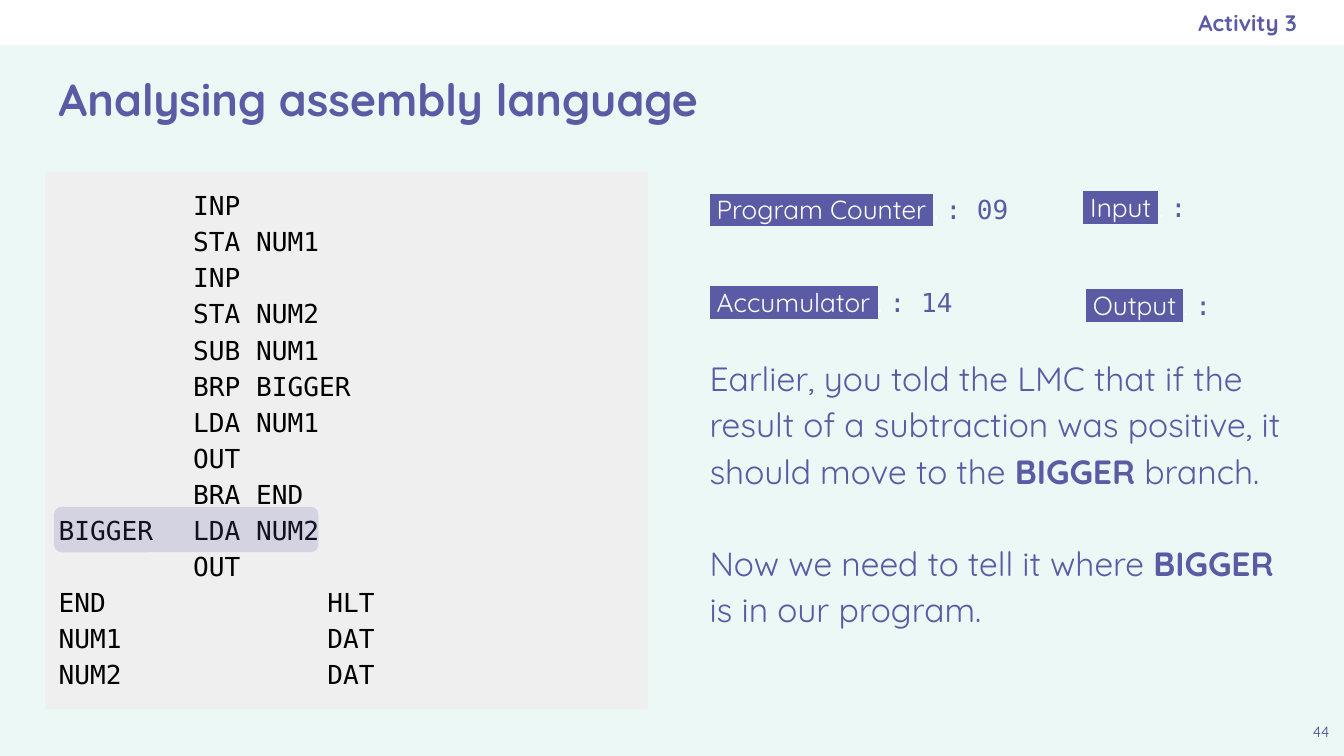
from lxml import etree
from pptx import Presentation
from pptx.dml.color import RGBColor
from pptx.enum.shapes import MSO_SHAPE
from pptx.enum.text import MSO_ANCHOR, MSO_AUTO_SIZE, PP_ALIGN
from pptx.oxml.ns import qn
from pptx.util import Cm, Pt

RECT, ROUNDED = MSO_SHAPE.RECTANGLE, MSO_SHAPE.ROUNDED_RECTANGLE
TOP, MIDDLE = MSO_ANCHOR.TOP, MSO_ANCHOR.MIDDLE
LEFT, CENTER, RIGHT = PP_ALIGN.LEFT, PP_ALIGN.CENTER, PP_ALIGN.RIGHT
NO_FIT = MSO_AUTO_SIZE.NONE

SANS, MONO = "Quicksand", "DejaVu Sans Mono"
PURPLE, DARK_PURPLE = "5B5BA5", "494985"
WHITE, BLACK, GREY, MINT = "FFFFFF", "000000", "EFEFEF", "ECF8F5"
INSET = 0.25
TAB = 2.54

PROGRAM = [
    "INP", "STA NUM1", "INP", "STA NUM2", "SUB NUM1", "BRP BIGGER",
    "LDA NUM1", "OUT", "BRA END", "BIGGER \tLDA NUM2", "OUT",
    "END \t\tHLT", "NUM1\t\tDAT", "NUM2\t\tDAT",
]
REGISTERS = [
    ("Program Counter", ": 09", 13.16, 3.33, 6.2),
    ("Accumulator", ": 14", 13.16, 5.08, 6.2),
    ("Input", ":", 20.22, 3.28, 4.27),
    ("Output", ":", 20.27, 5.13, 4.27),
]
EXPLANATION = [
    ("Earlier, you told the LMC that if the result of a subtraction was "
     "positive, it should move to the ", "BIGGER", " branch."),
    ("Now we need to tell it where ", "BIGGER", " is in our program."),
]


def color(value):
    return RGBColor.from_string(value)


def set_font(font, size, name, value, bold=False):
    font.size = Pt(size)
    font.name = name
    font.bold = bold
    font.color.rgb = color(value)


def set_frame(tf, anchor=TOP, right=INSET):
    tf.word_wrap = True
    tf.auto_size = NO_FIT
    tf.vertical_anchor = anchor
    tf.margin_left = tf.margin_top = tf.margin_bottom = Cm(INSET)
    tf.margin_right = Cm(right)


def add_box(slide, box, shape, fill):
    sp = slide.shapes.add_shape(shape, *map(Cm, box))
    sp.shadow.inherit = False
    sp.fill.solid()
    sp.fill.fore_color.rgb = color(fill)
    sp.line.fill.background()
    return sp


def add_text_frame(slide, box, anchor=TOP, right=INSET):
    tf = slide.shapes.add_textbox(*map(Cm, box)).text_frame
    set_frame(tf, anchor, right)
    return tf


def add_label(slide, box, text, size, value, align, bold=False, anchor=TOP, right=INSET):
    p = add_text_frame(slide, box, anchor, right).paragraphs[0]
    p.text = text
    p.alignment = align
    set_font(p.font, size, SANS, value, bold)


def add_title(slide, text):
    title = slide.shapes.title
    title.left, title.top, title.width, title.height = map(Cm, (0.86, 0.89, 23.67, 1.93))
    set_frame(title.text_frame, MIDDLE)
    p = title.text_frame.paragraphs[0]
    p.text = text
    p.alignment = LEFT
    set_font(p.font, 24, SANS, PURPLE, True)


def add_tabs(p):
    tabs = etree.SubElement(p._p.get_or_add_pPr(), qn("a:tabLst"))
    for stop in (1, 2):
        etree.SubElement(tabs, qn("a:tab"), pos=str(Cm(stop * TAB)), algn="l")


def add_program(slide):
    tf = add_box(slide, (0.86, 3.25, 11.38, 10.16), RECT, GREY).text_frame
    set_frame(tf)
    for i, line in enumerate(PROGRAM):
        p = tf.add_paragraph() if i else tf.paragraphs[0]
        p.text = line
        if "\t" in line:
            add_tabs(p)
        else:
            p._p.get_or_add_pPr().set("marL", str(Cm(TAB)))
        p.alignment = LEFT
        p.line_spacing = 1.15
        set_font(p.font, 14, MONO, BLACK)


def add_line_marker(slide):
    sp = add_box(slide, (1.02, 9.58, 5, 0.86), ROUNDED, PURPLE)
    sp.adjustments[0] = 0.17
    rgb = sp._element.spPr.find(qn("a:solidFill")).find(qn("a:srgbClr"))
    etree.SubElement(rgb, qn("a:alpha"), val="19000")


def highlight(r, value):
    mark = etree.Element(qn("a:highlight"))
    etree.SubElement(mark, qn("a:srgbClr"), val=value)
    r._r.get_or_add_rPr().find(qn("a:solidFill")).addnext(mark)


def add_register(slide, name, value, left, top, width):
    p = add_text_frame(slide, (left, top, width, 1.02), right=0.15).paragraphs[0]
    p.line_spacing = 1.14
    runs = [(f" {name} ", SANS, WHITE), (". ", SANS, WHITE), (value, MONO, PURPLE)]
    for text, font, rgb in runs:
        r = p.add_run()
        r.text = text
        set_font(r.font, 14, font, rgb)
    highlight(p.runs[0], PURPLE)


def add_explanation(slide):
    tf = add_text_frame(slide, (13.16, 6.4, 11.38, 7.04))
    for i, parts in enumerate(EXPLANATION):
        p = tf.add_paragraph() if i else tf.paragraphs[0]
        p.line_spacing = 1.15
        if i:
            p.space_before = Pt(24.75)
        for text in parts:
            r = p.add_run()
            r.text = text
            set_font(r.font, 18, SANS, PURPLE, text == "BIGGER")


def main():
    prs = Presentation()
    prs.slide_width, prs.slide_height = Cm(25.4), Cm(14.29)
    slide = prs.slides.add_slide(prs.slide_layouts[5])
    slide.background.fill.solid()
    slide.background.fill.fore_color.rgb = color(MINT)

    add_box(slide, (0, 0, 25.4, 0.86), RECT, WHITE)
    add_title(slide, "Analysing assembly language")
    add_label(slide, (14.6, 0, 9.91, 0.86), "Activity 3", 12, PURPLE, RIGHT, True, MIDDLE, 0)
    add_program(slide)
    add_line_marker(slide)
    for register in REGISTERS:
        add_register(slide, *register)
    add_explanation(slide)
    add_label(slide, (24.54, 13.41, 0.86, 0.86), "44", 8, DARK_PURPLE, CENTER)
    prs.save("out.pptx")


if __name__ == "__main__":
    main()
